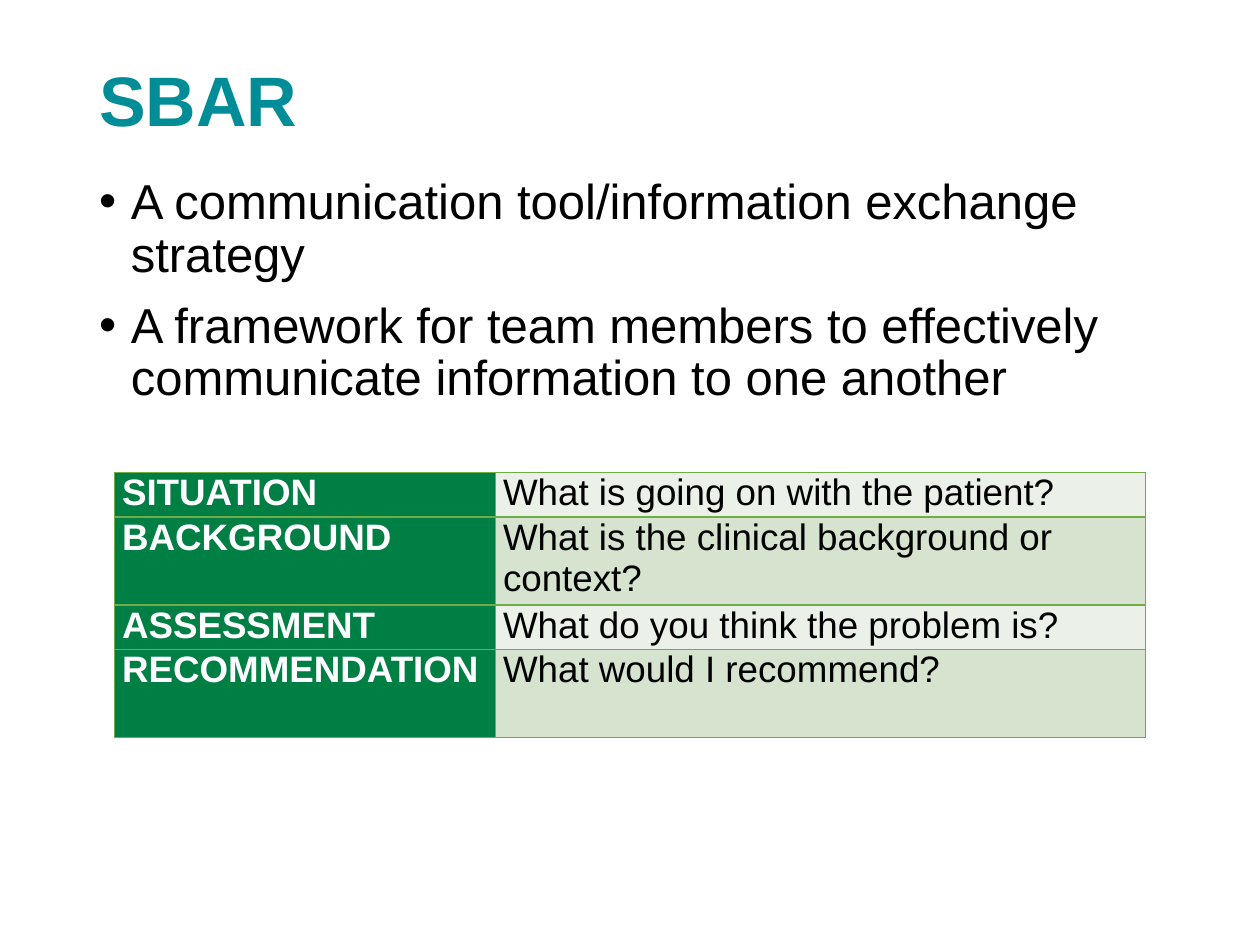
from lxml import etree
from pptx import Presentation
from pptx.dml.color import RGBColor
from pptx.enum.text import MSO_ANCHOR
from pptx.oxml.ns import qn
from pptx.util import Cm, Pt

TITLE = "SBAR"
BULLETS = [
    "A communication tool/information exchange strategy",
    "A framework for team members to effectively communicate information to one another",
]
# Step, question, lines of height
STEPS = [
    ("SITUATION", "What is going on with the patient?", 1),
    ("BACKGROUND", "What is the clinical background or context?", 2),
    ("ASSESSMENT", "What do you think the problem is?", 1),
    ("RECOMMENDATION", "What would I recommend?", 2),
]

FONT = "Arial"
TEAL = RGBColor(0x00, 0x8D, 0x98)
BLACK = RGBColor(0x00, 0x00, 0x00)
WHITE = RGBColor(0xFF, 0xFF, 0xFF)
GREEN = RGBColor(0x00, 0x7F, 0x44)
BANDS = [RGBColor(0xEB, 0xF1, 0xE9), RGBColor(0xD5, 0xE3, 0xCF)]
BORDER = RGBColor(0x70, 0xAD, 0x47)
MIDDLE = MSO_ANCHOR.MIDDLE
TOP = MSO_ANCHOR.TOP

LEFT, WIDTH = Cm(1.75), Cm(21.9)
COLUMNS = [Cm(7.68), Cm(13.1)]
LINE = Cm(0.89)
INDENT = Cm(0.64)


def add_span(para, text, size, color, bold=False):
    span = para.add_run()
    span.text = text
    span.font.name = FONT
    span.font.size = Pt(size)
    span.font.bold = bold
    span.font.color.rgb = color


def add_box(slide, top, height, anchor):
    frame = slide.shapes.add_textbox(LEFT, top, WIDTH, height).text_frame
    frame.word_wrap = True
    frame.vertical_anchor = anchor
    return frame


def add_bullet(para):
    props = para._p.get_or_add_pPr()
    props.set("marL", str(INDENT))
    props.set("indent", str(-INDENT))
    etree.SubElement(props, qn("a:buFont"), typeface=FONT)
    etree.SubElement(props, qn("a:buChar"), char="•")


def add_borders(cell):
    """Outline all four sides; borders must come before the cell's fill."""
    props = cell._tc.get_or_add_tcPr()
    for side in ("a:lnL", "a:lnR", "a:lnT", "a:lnB"):
        line = etree.SubElement(props, qn(side), w=str(Pt(1)))
        fill = etree.SubElement(line, qn("a:solidFill"))
        etree.SubElement(fill, qn("a:srgbClr"), val=str(BORDER))


def fill_cell(cell, text, fill, color, bold):
    add_borders(cell)
    cell.fill.solid()
    cell.fill.fore_color.rgb = fill
    cell.margin_left = cell.margin_right = Cm(0.15)
    cell.margin_top = cell.margin_bottom = 0
    add_span(cell.text_frame.paragraphs[0], text, 21, color, bold)


def add_steps(slide):
    height = LINE * sum(lines for _, _, lines in STEPS)
    table = slide.shapes.add_table(
        len(STEPS), len(COLUMNS), Cm(2.31), Cm(9.53), sum(COLUMNS), height
    ).table
    for column, width in zip(table.columns, COLUMNS):
        column.width = width
    for i, (step, question, lines) in enumerate(STEPS):
        table.rows[i].height = LINE * lines
        fill_cell(table.cell(i, 0), step, GREEN, WHITE, True)
        fill_cell(table.cell(i, 1), question, BANDS[i % 2], BLACK, False)


def main():
    deck = Presentation()
    deck.slide_width, deck.slide_height = Cm(25.4), Cm(19.05)
    slide = deck.slides.add_slide(deck.slide_layouts[6])

    title = add_box(slide, Cm(1.02), Cm(2.13), MIDDLE).paragraphs[0]
    title.line_spacing = 0.9
    add_span(title, TITLE, 40, TEAL, True)

    body = add_box(slide, Cm(3.45), Cm(12.1), TOP)
    for i, text in enumerate(BULLETS):
        para = body.add_paragraph() if i else body.paragraphs[0]
        add_bullet(para)
        para.line_spacing = 0.9
        para.space_before = Pt(10 if i else 0)
        add_span(para, text, 28, BLACK)

    add_steps(slide)
    deck.save("out.pptx")


if __name__ == "__main__":
    main()
